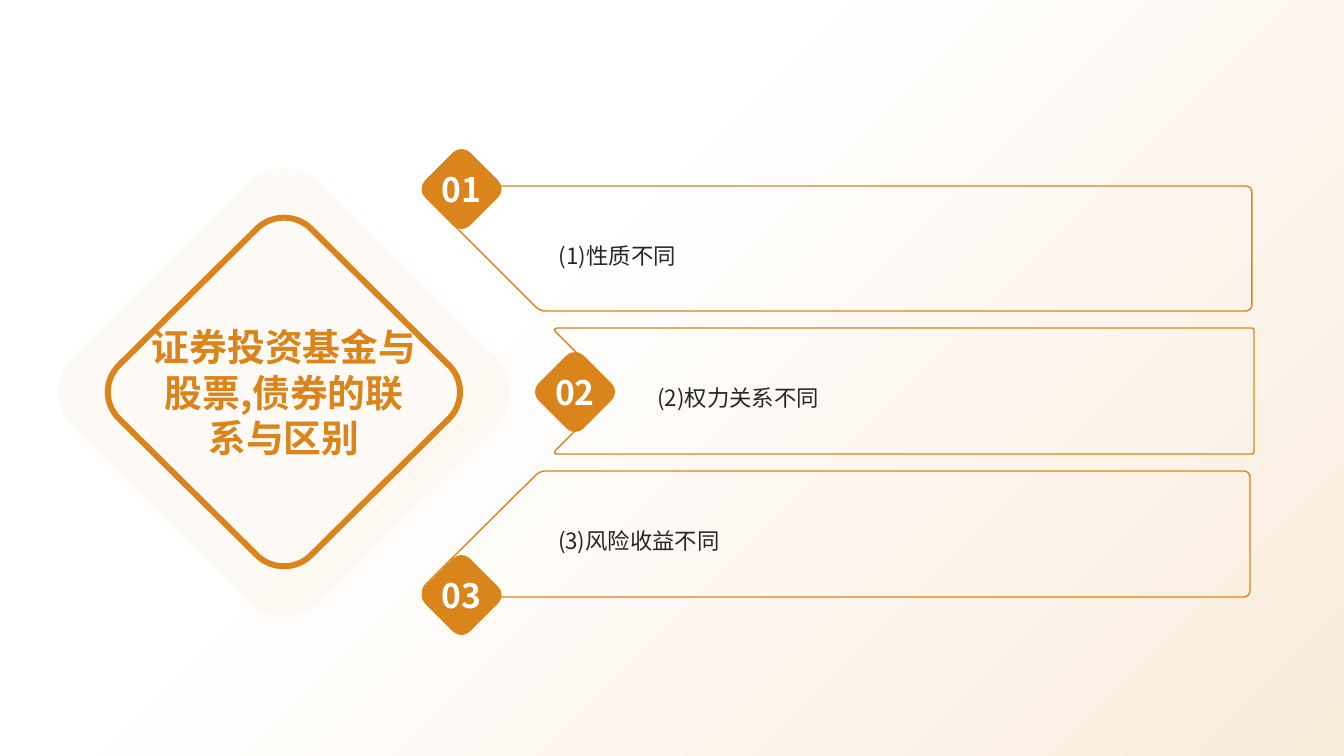
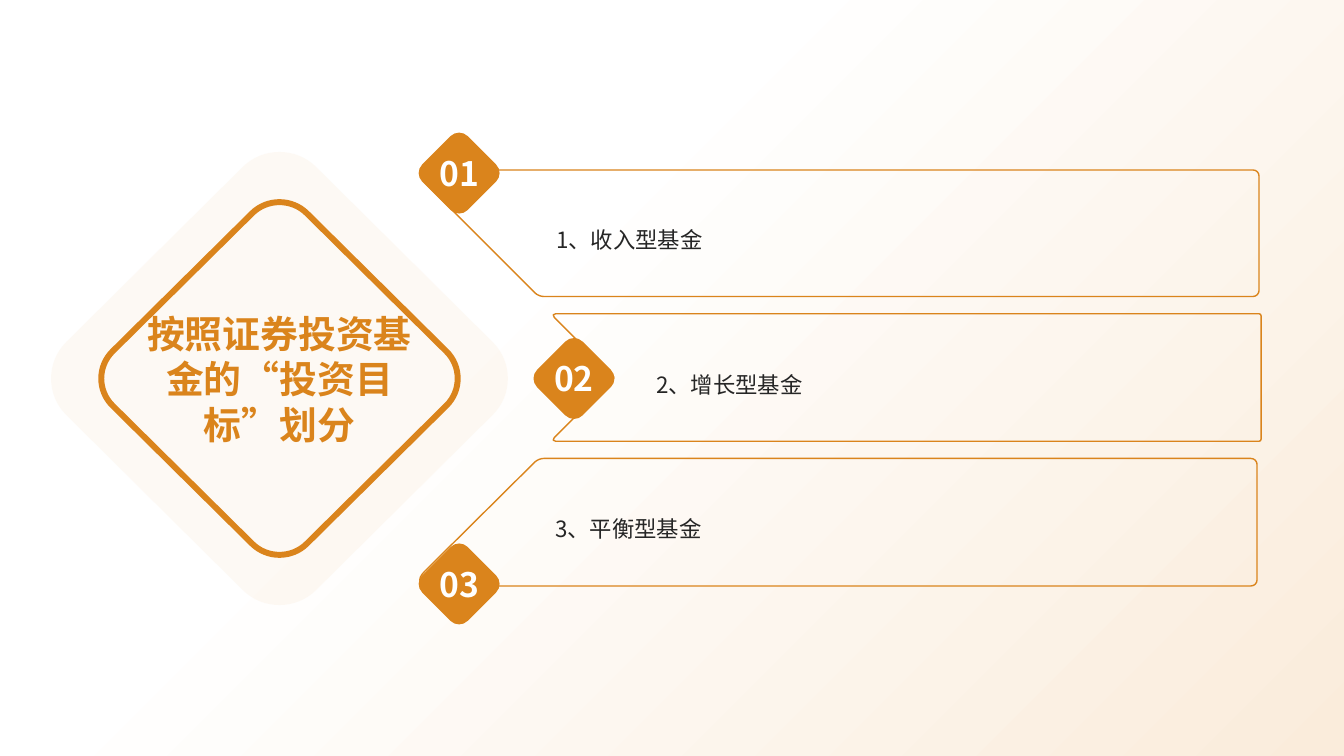
import math

import pptx
import pptx.dml.color
import pptx.enum.shapes
import pptx.enum.text
import pptx.util
from lxml import etree
from pptx.oxml.ns import qn

PX = 12192000 / 1344
WIDTH, HEIGHT = 1344, 756
FONT = "Noto Sans CJK SC"
ORANGE, HALO, INK, WHITE = "DA841C", "F6DAB9", "262626", "FFFFFF"
BACKDROP = [(0.37, WHITE), (1, "FAECDB")]

# Everything is placed relative to the centre of the large diamond.
SLIDES = [
    {"centre": (284, 392), "zoom": 1,
     "title": "证券投资基金与股票,债券的联系与区别",
     "items": ["(1)性质不同", "(2)权力关系不同", "(3)风险收益不同"]},
    {"centre": (279.5, 378.5), "zoom": 1.012,
     "title": "按照证券投资基金的“投资目标”划分",
     "items": ["1、收入型基金", "2、增长型基金", "3、平衡型基金"]},
]

# Corners are (x, y, length cut off each edge for rounding).
PANELS = [
    {"corners": [(968, -206, 6), (968, -81, 6), (256, -81, 5), (131, -206, 20)],
     "inset": 134, "badge": (177.5, -203)},
    {"corners": [(970, -64, 2), (970, 62, 2), (268, 62, 5), (331, -1, 1), (268, -64, 5)],
     "inset": 103, "badge": (291, 0)},
    {"corners": [(966, 205, 6), (966, 79, 6), (256, 79, 5), (129, 205, 20)],
     "inset": 135, "badge": (177.5, 203)},
]
DRAW_ORDER = [1, 0, 2]


def emu(px):
    return round(px * PX)


def rgb(value):
    return pptx.dml.color.RGBColor.from_string(value)


def toward(start, end, distance):
    """Point at a distance from start on the way to end."""
    t = distance / math.dist(start, end)
    return tuple(a + (b - a) * t for a, b in zip(start, end))


def corner_arcs(corners):
    """Four Bezier points for each rounded corner of a polygon."""
    arcs = []
    for i, (x, y, cut) in enumerate(corners):
        corner = (x, y)
        before, after = corners[i - 1][:2], corners[(i + 1) % len(corners)][:2]
        arcs.append([toward(corner, before, cut), toward(corner, before, cut * 0.45),
                     toward(corner, after, cut * 0.45), toward(corner, after, cut)])
    return arcs


def middle(arc):
    return tuple(round((a + 3 * b + 3 * c + d) / 8) for a, b, c, d in zip(*arc))


def bend(sp, arcs):
    """Turn each corner's two straight segments into one Bezier segment."""
    path = next(sp.element.iter(qn("a:path")))
    segments = list(path)
    for i, arc in enumerate(arcs):
        flat, end = segments[3 * i + 1:3 * i + 3]
        curve = etree.Element(qn("a:cubicBezTo"))
        for x, y in arc[1:]:
            etree.SubElement(curve, qn("a:pt"), x=str(x - sp.left), y=str(y - sp.top))
        path.remove(flat)
        path.replace(end, curve)


def diamond(half_w, half_h, cut, centre=(0, 0)):
    x, y = centre
    return [(x - half_w, y, cut), (x, y - half_h, cut),
            (x + half_w, y, cut), (x, y + half_h, cut)]


def add_outline(s, corners, frame, fill=None, line_width=None):
    (cx, cy), zoom = frame["centre"], frame["zoom"]
    arcs = [[(emu(cx + x * zoom), emu(cy + y * zoom)) for x, y in arc]
            for arc in corner_arcs(corners)]
    points = [point for arc in arcs for point in (arc[0], middle(arc), arc[3])]
    builder = s.shapes.build_freeform(*points[0])
    builder.add_line_segments(points[1:], close=True)
    sp = builder.convert_to_shape()
    bend(sp, arcs)
    sp.shadow.inherit = False
    if fill:
        sp.fill.solid()
        sp.fill.fore_color.rgb = rgb(fill)
    else:
        sp.fill.background()
    if line_width:
        sp.line.width = pptx.util.Pt(line_width)
        sp.line.color.rgb = rgb(ORANGE)
    else:
        sp.line.fill.background()
    return sp


def write(sp, text, size, color, bold=False, align="CENTER", left=0, right=0,
          wrap=True, spacing=None):
    tf = sp.text_frame
    tf.text = text
    tf.word_wrap = wrap
    tf.vertical_anchor = pptx.enum.text.MSO_ANCHOR.MIDDLE
    tf.margin_left, tf.margin_right = emu(left), emu(right)
    tf.margin_top = tf.margin_bottom = 0
    p = tf.paragraphs[0]
    p.alignment = pptx.enum.text.PP_ALIGN[align]
    if spacing:
        p.line_spacing = spacing
    r = p.runs[0]
    r.font.size, r.font.bold, r.font.name = pptx.util.Pt(size), bold, FONT
    r.font.color.rgb = rgb(color)
    etree.SubElement(r.font._element, qn("a:ea"), typeface=FONT)


def move_backdrop_to_master(prs, s):
    """Draw the gradient on a slide, then move it behind the master's shapes."""
    sp = s.shapes.add_shape(pptx.enum.shapes.MSO_SHAPE.RECTANGLE,
                            0, 0, emu(WIDTH), emu(HEIGHT))
    sp.shadow.inherit = False
    sp.line.fill.background()
    sp.fill.gradient()
    sp.fill.gradient_angle = 315
    for stop, (position, color) in zip(sp.fill.gradient_stops, BACKDROP):
        stop.position = position
        stop.color.rgb = rgb(color)
    prs.slide_master.element.cSld.spTree.insert(2, sp.element)


def fill_slide(s, content):
    halo = add_outline(s, diamond(247, 245, 51), content, fill=HALO)
    color = next(halo.element.spPr.iter(qn("a:srgbClr")))
    etree.SubElement(color, qn("a:alpha"), val="15000")

    for i in DRAW_ORDER:
        panel = add_outline(s, PANELS[i]["corners"], content, line_width=1)
        write(panel, content["items"][i], 16, INK, align="LEFT",
              left=PANELS[i]["inset"], spacing=1.5)
    for number, panel in enumerate(PANELS, 1):
        badge = add_outline(s, diamond(45, 45, 12, panel["badge"]), content, fill=ORANGE)
        write(badge, f"{number:02}", 24, WHITE, bold=True, wrap=False)

    ring = add_outline(s, diamond(192, 190, 38), content, line_width=4.25)
    write(ring, content["title"], 27, ORANGE, bold=True, left=39, right=39)


def main():
    prs = pptx.Presentation()
    prs.slide_width, prs.slide_height = emu(WIDTH), emu(HEIGHT)
    slides = [prs.slides.add_slide(prs.slide_layouts[6]) for _ in SLIDES]
    move_backdrop_to_master(prs, slides[0])
    for s, content in zip(slides, SLIDES):
        fill_slide(s, content)
    prs.save("out.pptx")


if __name__ == "__main__":
    main()
